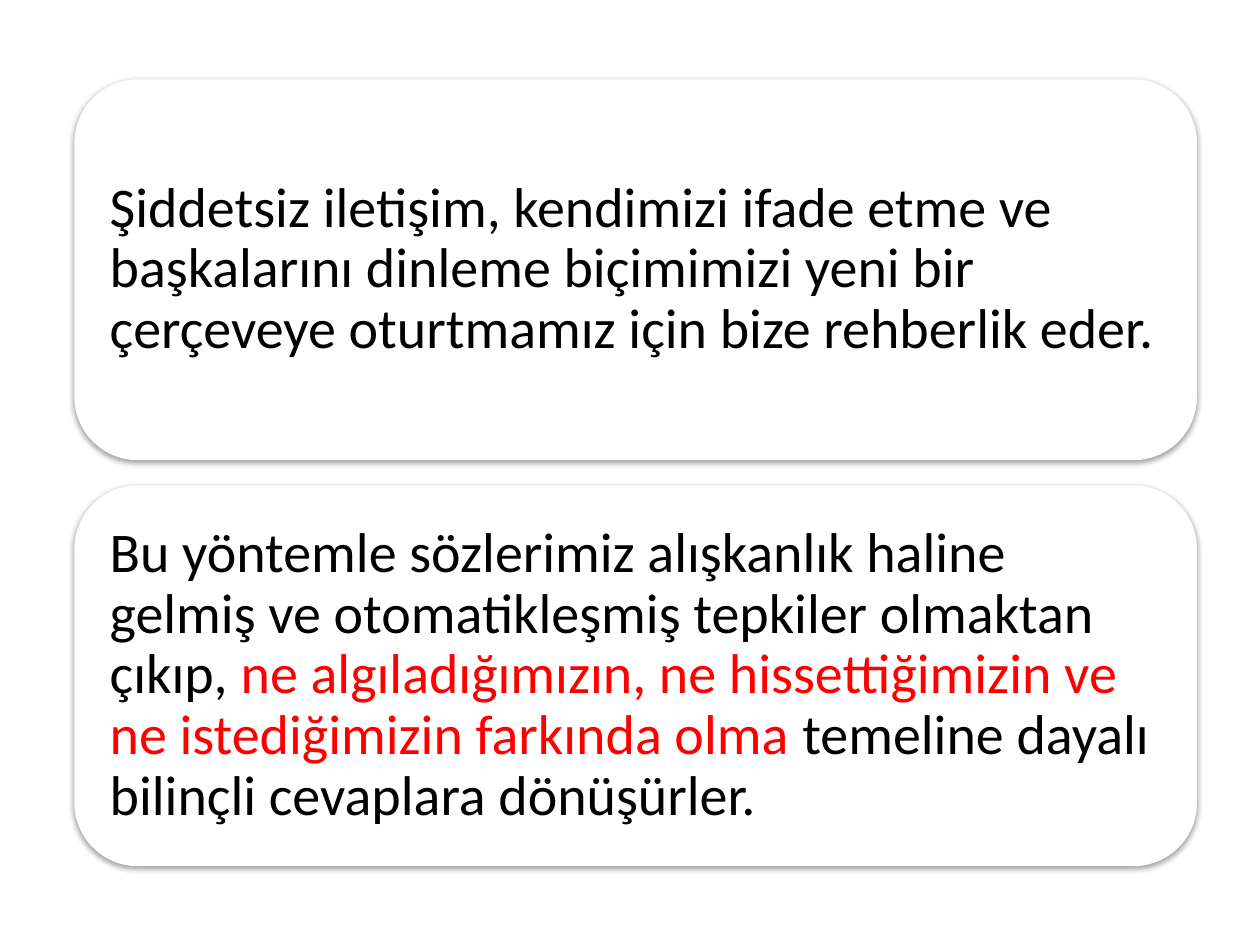
import lxml.etree
import pptx
import pptx.dml.color
import pptx.enum.shapes
import pptx.enum.text
import pptx.oxml
import pptx.oxml.ns
import pptx.util

COLORS = {"card": "FFFFFF", "text": "000000", "accent": "FF0000", "shadow": "000000"}
FONT = "Calibri"
SLIDE_WIDTH, SLIDE_HEIGHT = 10, 7.5
LEFT, TOP = 0.059 * SLIDE_WIDTH, 0.084 * SLIDE_HEIGHT
CARD_WIDTH, CARD_HEIGHT = 0.891 * SLIDE_WIDTH, 0.403 * SLIDE_HEIGHT
ROW_GAP = 0.2
TEXT_MARGIN = 0.15
TEXT_INSET = 0.13

CARDS = [
    [
        ("Şiddetsiz iletişim, kendimizi ifade etme ve başkalarını dinleme "
         "biçimimizi yeni bir çerçeveye oturtmamız için bize rehberlik eder.", "text"),
    ],
    [
        ("Bu yöntemle sözlerimiz alışkanlık haline gelmiş ve otomatikleşmiş "
         "tepkiler olmaktan çıkıp, ", "text"),
        ("ne algıladığımızın, ne hissettiğimizin ve ne istediğimizin farkında olma ", "accent"),
        ("temeline dayalı bilinçli cevaplara dönüşürler.", "text"),
    ],
]


def rgb(name):
    return pptx.dml.color.RGBColor.from_string(COLORS[name])


def inches(*lengths):
    return [pptx.util.Inches(length) for length in lengths]


def add_soft_shadow(shape):
    shape.shadow.inherit = False
    effects = shape._element.spPr.find(pptx.oxml.ns.qn("a:effectLst"))
    effects.append(pptx.oxml.parse_xml(
        f'<a:outerShdw {pptx.oxml.ns.nsdecls("a")} blurRad="{pptx.util.Pt(3.1)}" '
        f'dist="{pptx.util.Pt(1.6)}" dir="5400000" rotWithShape="0">'
        f'<a:srgbClr val="{COLORS["shadow"]}"><a:alpha val="38000"/></a:srgbClr>'
        '</a:outerShdw>'))


def add_card(page, left, top, width, height, spans):
    card = page.shapes.add_shape(
        pptx.enum.shapes.MSO_SHAPE.ROUNDED_RECTANGLE, *inches(left, top, width, height))
    card.fill.solid()
    card.fill.fore_color.rgb = rgb("card")
    card.line.fill.background()
    add_soft_shadow(card)

    box = page.shapes.add_textbox(*inches(
        left + TEXT_MARGIN, top + TEXT_MARGIN,
        width - 2 * TEXT_MARGIN, height - 2 * TEXT_MARGIN))
    frame = box.text_frame
    frame.word_wrap = True
    frame.vertical_anchor = pptx.enum.text.MSO_ANCHOR.MIDDLE
    frame.margin_left = frame.margin_right = pptx.util.Inches(TEXT_INSET)
    frame.margin_top = frame.margin_bottom = pptx.util.Inches(TEXT_INSET)
    para = frame.paragraphs[0]
    para.line_spacing = 0.9
    for text, color in spans:
        span = para.add_run()
        span.text = text
        span.font.name = FONT
        span.font.size = pptx.util.Pt(32)
        span.font.color.rgb = rgb(color)


def main():
    deck = pptx.Presentation()
    deck.slide_width, deck.slide_height = inches(SLIDE_WIDTH, SLIDE_HEIGHT)
    page = deck.slides.add_slide(deck.slide_layouts[6])
    for row, spans in enumerate(CARDS):
        top = TOP + row * (CARD_HEIGHT + ROW_GAP)
        add_card(page, LEFT, top, CARD_WIDTH, CARD_HEIGHT, spans)
    deck.save("out.pptx")


if __name__ == "__main__":
    main()
